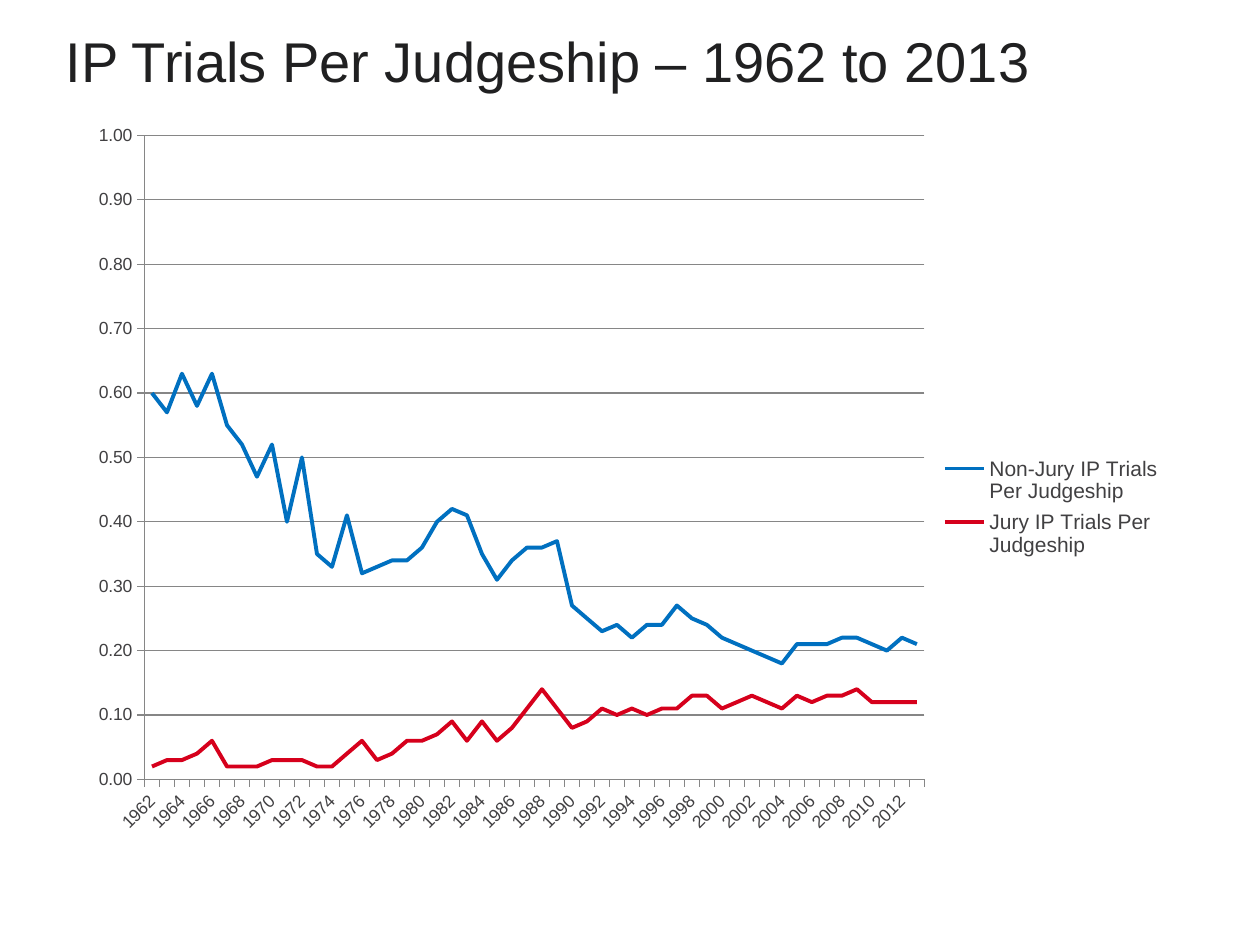
from dataclasses import dataclass

from lxml import etree
from pptx import Presentation
from pptx.chart.data import CategoryChartData
from pptx.dml.color import RGBColor
from pptx.enum import chart as ch, text
from pptx.oxml import ns
from pptx.util import Inches, Pt

COLORS = {"title": "202021", "label": "414042", "grid": "868686",
          "jury": "D6001C", "bench": "0070C0", "back": "FFFFFF"}
FACE = "Arial"


@dataclass
class Trend:
    name: str
    color: str
    vals: list[float]


TRENDS = [
    Trend("Jury IP Trials Per Judgeship", "jury", [
        0.02, 0.03, 0.03, 0.04, 0.06, 0.02, 0.02, 0.02, 0.03, 0.03, 0.03,
        0.02, 0.02, 0.04, 0.06, 0.03, 0.04, 0.06, 0.06, 0.07, 0.09, 0.06,
        0.09, 0.06, 0.08, 0.11, 0.14, 0.11, 0.08, 0.09, 0.11, 0.1, 0.11,
        0.1, 0.11, 0.11, 0.13, 0.13, 0.11, 0.12, 0.13, 0.12, 0.11, 0.13,
        0.12, 0.13, 0.13, 0.14, 0.12, 0.12, 0.12, 0.12]),
    Trend("Non-Jury IP Trials Per Judgeship", "bench", [
        0.58, 0.54, 0.6, 0.54, 0.57, 0.53, 0.5, 0.45, 0.49, 0.37, 0.47,
        0.33, 0.31, 0.37, 0.26, 0.3, 0.3, 0.28, 0.3, 0.33, 0.33, 0.35,
        0.26, 0.25, 0.26, 0.25, 0.22, 0.26, 0.19, 0.16, 0.12, 0.14, 0.11,
        0.14, 0.13, 0.16, 0.12, 0.11, 0.11, 0.09, 0.07, 0.07, 0.07, 0.08,
        0.09, 0.08, 0.09, 0.08, 0.09, 0.08, 0.1, 0.09]),
]


def rgb(key: str) -> RGBColor:
    return RGBColor.from_string(COLORS[key])


def apply(obj, vals: dict) -> None:
    for key, val in vals.items():
        setattr(obj, key, val)


def style(font, size: float, color: str) -> None:
    apply(font, {"name": FACE, "size": Pt(size)})
    font.color.rgb = rgb(color)


def stroke(line, color: str, width: float) -> None:
    line.color.rgb = rgb(color)
    line.width = Pt(width)


def layout(box: tuple, inner: bool = False):
    """Build a manual layout from left, top, width and height fractions."""
    root = etree.Element(ns.qn("c:layout"))
    man = etree.SubElement(root, ns.qn("c:manualLayout"))
    pairs = [("layoutTarget", "inner")] if inner else []
    pairs += [("xMode", "edge"), ("yMode", "edge"), *zip("xywh", box)]
    for tag, val in pairs:
        etree.SubElement(man, ns.qn(f"c:{tag}")).set("val", str(val))
    return root


def add_title(slide) -> None:
    title = slide.shapes.title
    apply(title, {"left": Inches(0.52), "top": Inches(0.25),
                  "width": Inches(8.96), "height": Inches(0.51)})
    frame = title.text_frame
    apply(frame, {"margin_left": 0, "margin_right": 0, "margin_top": 0,
                  "margin_bottom": 0, "word_wrap": True,
                  "auto_size": text.MSO_AUTO_SIZE.NONE,
                  "vertical_anchor": text.MSO_ANCHOR.MIDDLE})
    para = frame.paragraphs[0]
    para.text = "IP Trials Per Judgeship – 1962 to 2013"
    apply(para, {"alignment": text.PP_ALIGN.LEFT, "line_spacing": 0.95})
    style(para.runs[0].font, 32, "title")


def add_plot(slide) -> None:
    data = CategoryChartData(number_format="0.00")
    data.categories = [str(year) for year in range(1962, 2014)]
    for trend in TRENDS:
        data.add_series(trend.name, trend.vals)
    chart = slide.shapes.add_chart(
        ch.XL_CHART_TYPE.LINE_STACKED, Inches(0.67), Inches(0.92),
        Inches(8.67), Inches(5.75), data).chart
    style(chart.font, 10, "label")
    apply(chart, {"has_title": False, "has_legend": True})
    plot = chart.plots[0]
    plot.vary_by_categories = False
    for trend, line in zip(TRENDS, plot.series):
        line.smooth = False
        line.marker.style = ch.XL_MARKER_STYLE.NONE
        stroke(line.format.line, trend.color, 2.25)

    # Axes
    cat, val = chart.category_axis, chart.value_axis
    for axis in (cat, val):
        axis.major_tick_mark = ch.XL_TICK_MARK.OUTSIDE
        axis.minor_tick_mark = ch.XL_TICK_MARK.NONE
        stroke(axis.format.line, "grid", 0.75)
        style(axis.tick_labels.font, 10, "label")
    apply(val, {"minimum_scale": 0, "maximum_scale": 1, "major_unit": 0.1,
                "has_major_gridlines": True})
    stroke(val.major_gridlines.format.line, "grid", 0.75)
    apply(val.tick_labels, {"number_format": "0.00",
                            "number_format_is_linked": False})

    # Slanted year labels, every second year
    root = cat._element
    root.find(".//" + ns.qn("a:bodyPr")).set("rot", "-2700000")
    skip = etree.Element(ns.qn("c:tickLblSkip"))
    skip.set("val", "2")
    root.find(ns.qn("c:noMultiLvlLbl")).addprevious(skip)

    # Legend and plot area
    key = chart.legend
    apply(key, {"position": ch.XL_LEGEND_POSITION.RIGHT,
                "include_in_layout": False})
    style(key.font, 12, "label")
    for old in key._element.findall(ns.qn("c:layout")):
        key._element.remove(old)
    key._element.find(ns.qn("c:legendPos")).addnext(
        layout((0.78, 0.46, 0.21, 0.16)))
    area = chart._chartSpace.find(".//" + ns.qn("c:plotArea"))
    for old in area.findall(ns.qn("c:layout")):
        area.remove(old)
    area.insert(0, layout((0.055, 0.027, 0.714, 0.889), inner=True))


def main() -> None:
    deck = Presentation()
    apply(deck, {"slide_width": Inches(10), "slide_height": Inches(7.5)})
    slide = deck.slides.add_slide(deck.slide_layouts[5])
    fill = slide.background.fill
    fill.solid()
    fill.fore_color.rgb = rgb("back")
    add_title(slide)
    add_plot(slide)
    deck.save("out.pptx")


if __name__ == "__main__":
    main()
